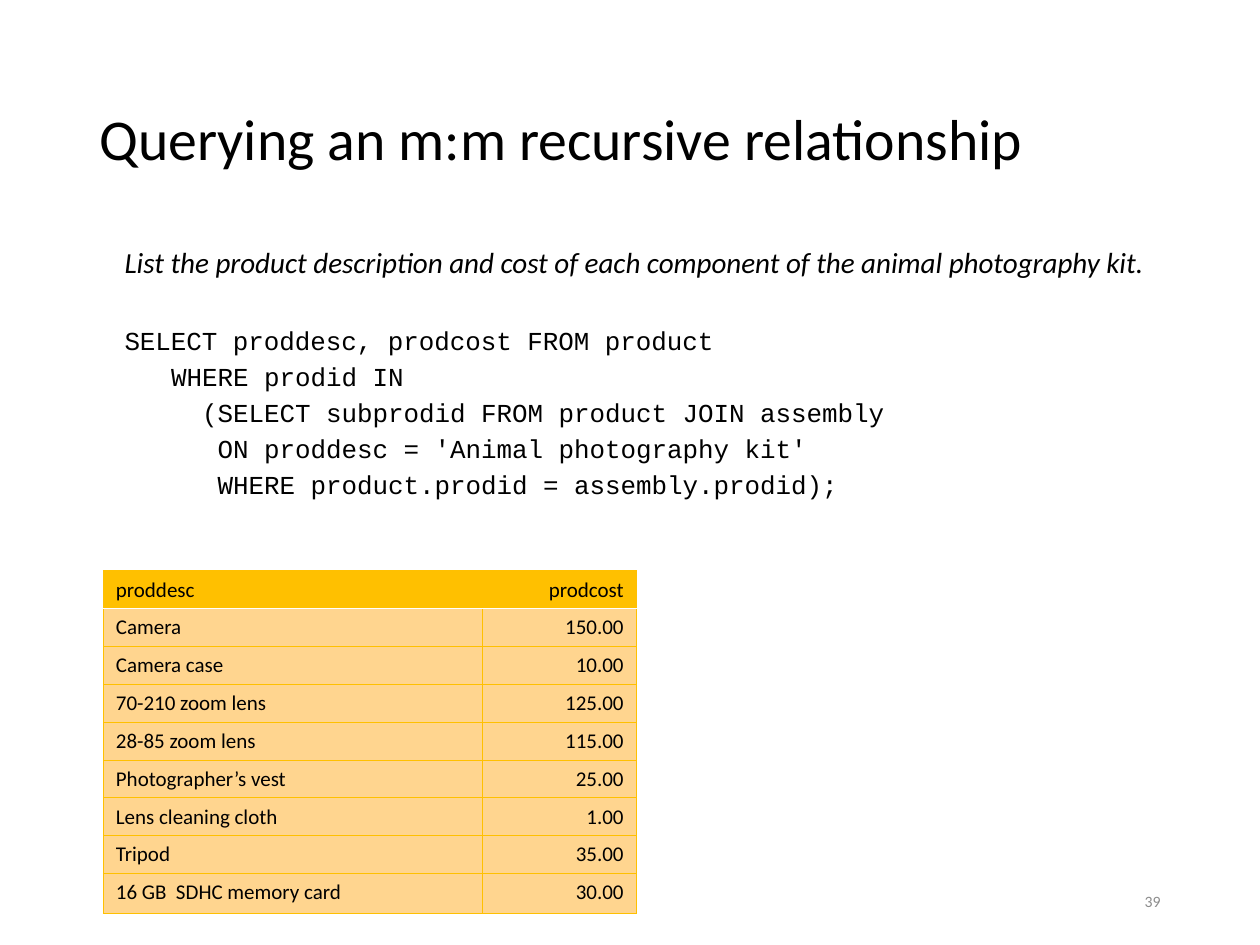
from lxml.etree import SubElement
from pptx import Presentation
from pptx.dml.color import RGBColor
from pptx.enum.text import MSO_ANCHOR, PP_ALIGN
from pptx.oxml.ns import qn
from pptx.util import Inches, Pt

BLACK = RGBColor(0, 0, 0)
GRAY = RGBColor(0x8C, 0x8C, 0x8C)
WHITE = RGBColor(0xFF, 0xFF, 0xFF)
GOLD = RGBColor(0xFF, 0xC0, 0x00)
PEACH = RGBColor(0xFF, 0xD5, 0x8F)


def style(p, size, color=BLACK, font="Calibri", italic=False):
    for r in p.runs:
        r.font.name, r.font.size = font, Pt(size)
        r.font.italic = italic
        r.font.color.rgb = color


def add_border(cell, side, color, width):
    ln = SubElement(cell._tc.get_or_add_tcPr(), qn("a:" + side), w=str(Pt(width)))
    fill = SubElement(ln, qn("a:solidFill"))
    SubElement(fill, qn("a:srgbClr"), val=str(color))


prs = Presentation()
prs.slide_width, prs.slide_height = Inches(10), Inches(7.5)
s = prs.slides.add_slide(prs.slide_layouts[5])

# Title
title = s.shapes.title
title.left, title.top = Inches(0.69), Inches(0.4)
title.width, title.height = Inches(8.62), Inches(1.45)
tf = title.text_frame
tf.text = "Querying an m:m recursive relationship"
tf.vertical_anchor = MSO_ANCHOR.MIDDLE
p = tf.paragraphs[0]
p.alignment = PP_ALIGN.LEFT
p.line_spacing = 0.9
style(p, 33)

# Question and SQL query, each code line with its indent in characters
query = [
    (0, "SELECT proddesc, prodcost FROM product"),
    (3, "WHERE prodid IN"),
    (5, "(SELECT subprodid FROM product JOIN assembly"),
    (6, "ON proddesc = 'Animal photography kit'"),
    (6, "WHERE product.prodid = assembly.prodid);"),
]
CODE_SIZE = 14.8
CHAR_WIDTH = Pt(CODE_SIZE * 0.6)
MARGIN = Inches(0.19)
tf = s.shapes.add_textbox(Inches(0.7), Inches(1.97), Inches(9.3), Inches(2.43)).text_frame
tf.word_wrap = True
p = tf.paragraphs[0]
p.text = "List the product description and cost of each component of the animal photography kit."
p.line_spacing = 0.7
p._p.get_or_add_pPr().set("marL", str(MARGIN))
style(p, 16.6, italic=True)
for i, (indent, line) in enumerate(query):
    p = tf.add_paragraph()
    p.text = line
    p.line_spacing = 0.7
    p.space_before = Pt(8.1 if i else 31)
    p._p.get_or_add_pPr().set("marL", str(MARGIN + indent * CHAR_WIDTH))
    style(p, CODE_SIZE, font="Courier New")

# Slide number
tf = s.shapes.add_textbox(Inches(7.06), Inches(6.95), Inches(2.25), Inches(0.4)).text_frame
tf.word_wrap = True
tf.text = "39"
tf.vertical_anchor = MSO_ANCHOR.MIDDLE
tf.paragraphs[0].alignment = PP_ALIGN.RIGHT
style(tf.paragraphs[0], 9, GRAY)

# Result table
rows = [
    ("proddesc", "prodcost"),
    ("Camera", "150.00"),
    ("Camera case", "10.00"),
    ("70-210 zoom lens", "125.00"),
    ("28-85 zoom lens", "115.00"),
    ("Photographer’s vest", "25.00"),
    ("Lens cleaning cloth", "1.00"),
    ("Tripod", "35.00"),
    ("16 GB  SDHC memory card", "30.00"),
]
table = s.shapes.add_table(len(rows), 2, Inches(0.82), Inches(4.53),
                           Inches(4.23), Inches(2.74)).table
table.columns[0].width, table.columns[1].width = Inches(3.01), Inches(1.22)
for i, row in enumerate(rows):
    table.rows[i].height = Inches(0.32 if i == len(rows) - 1 else 0.3)
    for j, value in enumerate(row):
        cell = table.cell(i, j)
        cell.text = value
        p = cell.text_frame.paragraphs[0]
        p.alignment = PP_ALIGN.RIGHT if j else PP_ALIGN.LEFT
        style(p, 12)
        for side in ("lnL", "lnR", "lnT", "lnB"):
            # White rule between header and body
            if (i, side) in ((0, "lnB"), (1, "lnT")):
                add_border(cell, side, WHITE, 1)
            else:
                add_border(cell, side, GOLD, 0.5)
        cell.fill.solid()
        cell.fill.fore_color.rgb = PEACH if i else GOLD

prs.save("out.pptx")
